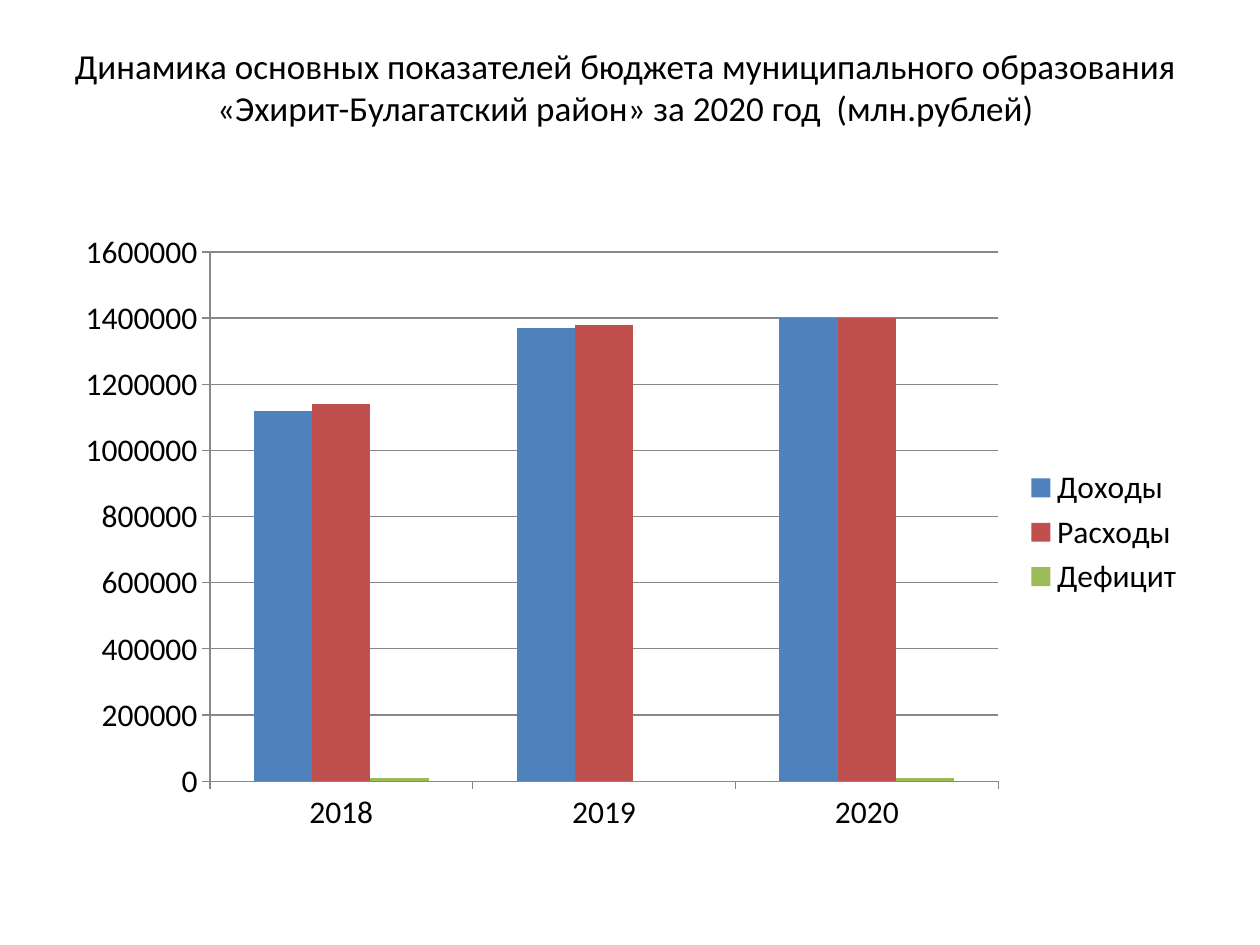
"""Build a slide with a column chart of district budget figures by year."""
from pptx import Presentation
from pptx.chart.data import CategoryChartData
from pptx.dml.color import RGBColor
from pptx.enum.chart import XL_CHART_TYPE, XL_LEGEND_POSITION, XL_TICK_MARK
from pptx.enum.text import MSO_ANCHOR, PP_ALIGN
from pptx.util import Inches, Pt

COLUMNS = XL_CHART_TYPE.COLUMN_CLUSTERED
LEGEND_RIGHT = XL_LEGEND_POSITION.RIGHT
TICK_OUTSIDE = XL_TICK_MARK.OUTSIDE
MIDDLE = MSO_ANCHOR.MIDDLE
CENTER = PP_ALIGN.CENTER

TITLE = (
    "Динамика основных показателей бюджета муниципального образования "
    "«Эхирит-Булагатский район» за 2020 год  (млн.рублей)"
)
YEARS = ["2018", "2019", "2020"]
INDICATORS = [
    ("Доходы", "4F81BD", (1120000, 1370000, 1400000)),
    ("Расходы", "C0504D", (1140000, 1380000, 1400000)),
    ("Дефицит", "9BBB59", (10000, 0, 10000)),
]
TITLE_AREA = (0.43, 0.3, 9.07, 0.77)
CHART_AREA = (0.5, 1.75, 9, 4.95)
TEXT_COLOR = "000000"
AXIS_COLOR = "878787"


def color(value):
    return RGBColor.from_string(value)


def style_font(font, size):
    font.name = "Calibri"
    font.size = Pt(size)
    font.color.rgb = color(TEXT_COLOR)


def style_line(line):
    line.color.rgb = color(AXIS_COLOR)
    line.width = Pt(0.75)


def add_title(slide):
    frame = slide.shapes.add_textbox(*map(Inches, TITLE_AREA)).text_frame
    frame.word_wrap = True
    frame.vertical_anchor = MIDDLE
    heading = frame.paragraphs[0]
    heading.text = TITLE
    heading.alignment = CENTER
    style_font(heading.font, 20)


def add_budget_chart(slide):
    budget = CategoryChartData(number_format="General")
    budget.categories = YEARS
    for name, _, amounts in INDICATORS:
        budget.add_series(name, amounts)
    chart = slide.shapes.add_chart(COLUMNS, *map(Inches, CHART_AREA), budget).chart
    style_font(chart.font, 18)
    chart.has_title = False
    chart.has_legend = True
    chart.legend.position = LEGEND_RIGHT
    chart.legend.include_in_layout = False

    columns = chart.plots[0]
    columns.gap_width = 150
    columns.overlap = 0
    columns.vary_by_categories = False
    for series, (_, fill, _) in zip(columns.series, INDICATORS):
        series.format.fill.solid()
        series.format.fill.fore_color.rgb = color(fill)

    years, amounts = chart.category_axis, chart.value_axis
    amounts.minimum_scale = 0
    amounts.maximum_scale = 1600000
    amounts.major_unit = 200000
    amounts.has_major_gridlines = True
    style_line(amounts.major_gridlines.format.line)
    for axis in (years, amounts):
        axis.major_tick_mark = TICK_OUTSIDE
        style_line(axis.format.line)


def main():
    deck = Presentation()
    deck.slide_width, deck.slide_height = Inches(10), Inches(7.5)
    slide = deck.slides.add_slide(deck.slide_layouts[6])
    add_title(slide)
    add_budget_chart(slide)
    deck.save("out.pptx")


if __name__ == "__main__":
    main()
